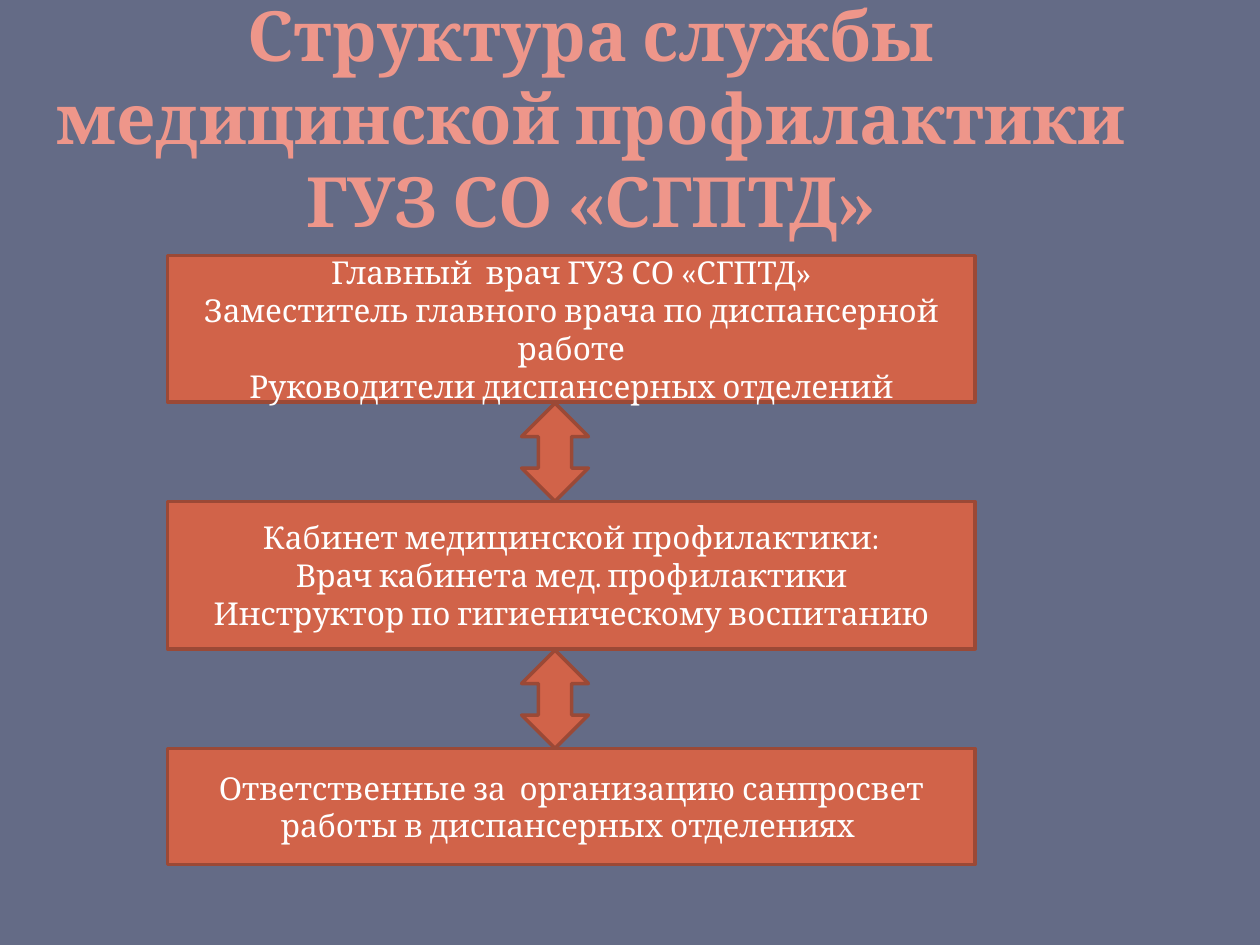
import pptx
import pptx.util
import pptx.dml.color
import pptx.enum.shapes
import pptx.enum.text

WIDTH, HEIGHT = 10, 7.5
FONT = "Cambria"
BACKGROUND, HEADING = "646B86", "EE968A"
FILL, OUTLINE, WHITE = "D16349", "9B4936", "FFFFFF"

# Shared column of the chart, in inches
LEVEL_LEFT, LEVEL_WIDTH = 1.33, 6.41
LINK_LEFT, LINK_WIDTH = 4.14, 0.53

# Top, height and lines of each level
LEVELS = [
    (2.03, 1.16, ["Главный  врач ГУЗ СО «СГПТД»",
                  "Заместитель главного врача по диспансерной работе",
                  "Руководители диспансерных отделений"]),
    (3.98, 1.17, ["Кабинет медицинской профилактики:",
                  "Врач кабинета мед. профилактики",
                  "Инструктор по гигиеническому воспитанию"]),
    (5.94, 0.92, ["Ответственные за  организацию санпросвет "
                  "работы в диспансерных отделениях "]),
]
SHAFT_SHARES = [0.5, 0.56]


def color(value):
    return pptx.dml.color.RGBColor.from_string(value)


def box(*lengths):
    return [pptx.util.Inches(length) for length in lengths]


def write(frame, lines, size, ink, bold=False):
    frame.word_wrap = True
    frame.vertical_anchor = pptx.enum.text.MSO_ANCHOR.MIDDLE
    for number, line in enumerate(lines):
        paragraph = frame.add_paragraph() if number else frame.paragraphs[0]
        paragraph.text = line
        paragraph.alignment = pptx.enum.text.PP_ALIGN.CENTER
        paragraph.font.name = FONT
        paragraph.font.size = pptx.util.Pt(size)
        paragraph.font.bold = bold
        paragraph.font.color.rgb = color(ink)


def add_block(slide, kind, *place):
    block = slide.shapes.add_shape(kind, *box(*place))
    block.shadow.inherit = False
    block.fill.solid()
    block.fill.fore_color.rgb = color(FILL)
    block.line.color.rgb = color(OUTLINE)
    block.line.width = pptx.util.Pt(2)
    return block


def add_heading(slide):
    heading = slide.shapes.add_textbox(*box(0.23, 0, 8.92, 1.25)).text_frame
    # The top margin lowers the centred lines, which overflow the box
    heading.margin_top, heading.margin_bottom = box(0.6, 0)
    write(heading, ["Структура службы медицинской профилактики ГУЗ СО «СГПТД»"],
          39.6, HEADING, bold=True)


def main():
    deck = pptx.Presentation()
    deck.slide_width, deck.slide_height = box(WIDTH, HEIGHT)
    slide = deck.slides.add_slide(deck.slide_layouts[6])
    slide.background.fill.solid()
    slide.background.fill.fore_color.rgb = color(BACKGROUND)
    add_heading(slide)

    # Levels of the service
    shapes = pptx.enum.shapes.MSO_SHAPE
    for top, height, lines in LEVELS:
        level = add_block(slide, shapes.RECTANGLE,
                          LEVEL_LEFT, top, LEVEL_WIDTH, height)
        write(level.text_frame, lines, 18, WHITE)

    # Two-way arrows filling the gaps between levels
    for upper, lower, shaft in zip(LEVELS, LEVELS[1:], SHAFT_SHARES):
        bottom = upper[0] + upper[1] + 0.01
        link = add_block(slide, shapes.UP_DOWN_ARROW,
                         LINK_LEFT, bottom, LINK_WIDTH, lower[0] - bottom)
        link.adjustments[0] = shaft
        link.adjustments[1] = 0.5

    deck.save("out.pptx")


if __name__ == "__main__":
    main()
